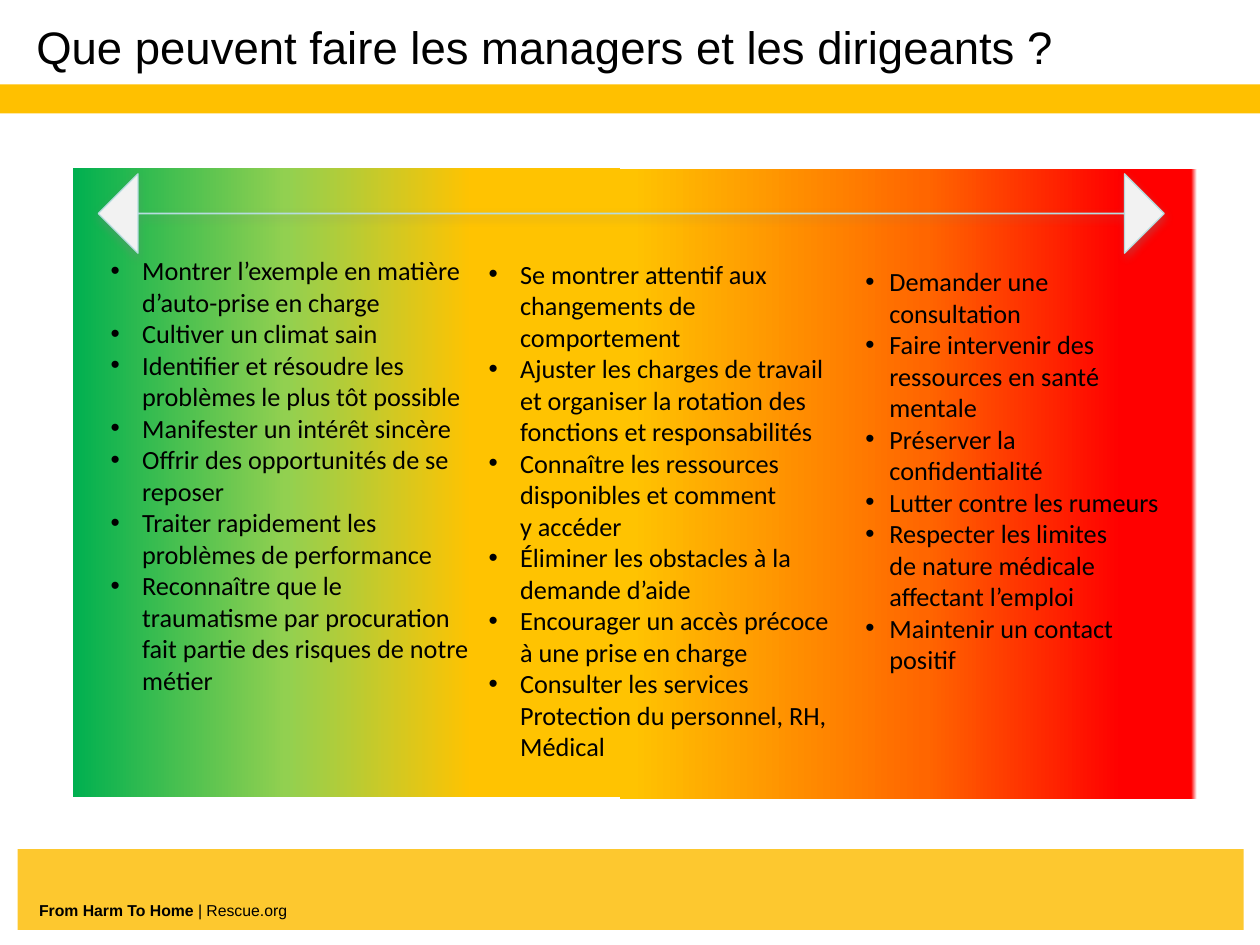
"""Build the slide on what managers and leaders can do."""
from dataclasses import dataclass

from lxml.etree import SubElement
from pptx import Presentation
from pptx.dml.color import RGBColor
from pptx.enum.shapes import MSO_SHAPE
from pptx.enum.text import MSO_ANCHOR
from pptx.oxml.ns import qn
from pptx.util import Inches, Pt


@dataclass(frozen=True)
class Theme:
    text: str = "000000"
    footer: str = "FDC82F"
    band: str = "FFC000"
    arrow: str = "F2F2F2"
    arrow_line: str = "B6DCDF"
    shadow: str = "808080"
    green_side: tuple = ((0, "00B050"), (39, "92D050"), (73, "FFC301"), (100, "FFC301"))
    red_side: tuple = ((0, "FFC301"), (2, "FFC301"), (53, "FF6600"), (87, "FF0000"),
                       (99, "FF0000"), (100, "FFFFFF"))
    head_font: str = "Arial"
    body_font: str = "Calibri"
    title_size: int = 26
    body_size: int = 15
    footer_size: int = 9


@dataclass(frozen=True)
class Box:
    left: float
    top: float
    width: float
    height: float

    def emu(self) -> tuple:
        return tuple(Inches(v) for v in (self.left, self.top, self.width, self.height))


@dataclass(frozen=True)
class Column:
    box: Box
    indent: float
    items: tuple


THEME = Theme()
COLUMNS = (
    Column(Box(0.78, 1.97, 3.08, 4.11), 0.25, (
        "Montrer l’exemple en matière d’auto-prise en charge",
        "Cultiver un climat sain",
        "Identifier et résoudre les problèmes le plus tôt possible",
        "Manifester un intérêt sincère",
        "Offrir des opportunités de se reposer",
        "Traiter rapidement les problèmes de performance",
        "Reconnaître que le traumatisme par procuration fait partie des risques de notre métier",
    )),
    Column(Box(3.78, 2, 3.16, 4.11), 0.25, (
        "Se montrer attentif aux changements de comportement",
        "Ajuster les charges de travail \net organiser la rotation des fonctions et responsabilités",
        "Connaître les ressources disponibles et comment \ny accéder",
        "Éliminer les obstacles à la demande d’aide",
        "Encourager un accès précoce \nà une prise en charge",
        "Consulter les services Protection du personnel, RH, Médical",
    )),
    Column(Box(6.77, 2.06, 2.62, 4.08), 0.19, (
        "Demander une consultation",
        "Faire intervenir des ressources en santé mentale",
        "Préserver la confidentialité",
        "Lutter contre les rumeurs",
        "Respecter les limites \nde nature médicale affectant l’emploi",
        "Maintenir un contact positif",
    )),
)


def add_block(s, box: Box, color: str, kind=MSO_SHAPE.RECTANGLE):
    sp = s.shapes.add_shape(kind, *box.emu())
    sp.shadow.inherit = False
    sp.fill.solid()
    sp.fill.fore_color.rgb = RGBColor.from_string(color)
    sp.line.fill.background()
    return sp


def add_gradient(s, box: Box, stops: tuple) -> None:
    sp = add_block(s, box, stops[0][1])
    sp.fill.gradient()
    sp.fill.gradient_angle = 0
    gs_lst = sp._element.spPr.find(qn("a:gradFill")).find(qn("a:gsLst"))
    for gs in list(gs_lst):
        gs_lst.remove(gs)
    for pos, color in stops:
        gs = SubElement(gs_lst, qn("a:gs"), pos=str(pos * 1000))
        SubElement(gs, qn("a:srgbClr"), val=color)


def add_arrow(s, box: Box) -> None:
    sp = add_block(s, box, THEME.arrow, MSO_SHAPE.LEFT_RIGHT_ARROW)
    sp.adjustments[0] = 0.008
    sp.adjustments[1] = 0.5
    sp.line.color.rgb = RGBColor.from_string(THEME.arrow_line)
    sp.line.width = Pt(0.75)
    effects = sp._element.spPr.find(qn("a:effectLst"))
    shadow = SubElement(effects, qn("a:outerShdw"), blurRad=str(Pt(5)), dist=str(Pt(1.8)),
                        dir="5400000", rotWithShape="0")
    color = SubElement(shadow, qn("a:srgbClr"), val=THEME.shadow)
    SubElement(color, qn("a:alpha"), val="35000")


def add_text(s, box: Box):
    tf = s.shapes.add_textbox(*box.emu()).text_frame
    tf.word_wrap = True
    return tf


def add_run(p, text: str, font: str, size: int, bold: bool = False) -> None:
    r = p.add_run()
    r.text = text
    r.font.name = font
    r.font.size = Pt(size)
    r.font.bold = bold
    r.font.color.rgb = RGBColor.from_string(THEME.text)


def add_column(s, col: Column) -> None:
    tf = add_text(s, col.box)
    for i, item in enumerate(col.items):
        p = tf.add_paragraph() if i else tf.paragraphs[0]
        pPr = p._p.get_or_add_pPr()
        pPr.set("marL", str(Inches(col.indent)))
        pPr.set("indent", str(-Inches(col.indent)))
        SubElement(pPr, qn("a:buFont"), typeface="Arial")
        SubElement(pPr, qn("a:buChar"), char="•")
        for j, line in enumerate(item.split("\n")):
            if j:
                p.add_line_break()
            add_run(p, line, THEME.body_font, THEME.body_size)


def add_title(s) -> None:
    p = add_text(s, Box(0.19, 0.15, 8.62, 0.67)).paragraphs[0]
    p.line_spacing = 0.9
    add_run(p, "Que peuvent faire les managers et les dirigeants ?",
            THEME.head_font, THEME.title_size)


def add_footer(s) -> None:
    add_block(s, Box(0.14, 6.74, 9.73, 0.64), THEME.footer)
    tf = add_text(s, Box(0.31, 7.15, 3.25, 0.15))
    tf.margin_left = tf.margin_top = tf.margin_right = tf.margin_bottom = 0
    tf.vertical_anchor = MSO_ANCHOR.BOTTOM
    p = tf.paragraphs[0]
    add_run(p, "From Harm To Home ", THEME.head_font, THEME.footer_size, bold=True)
    add_run(p, "| Rescue.org", THEME.head_font, THEME.footer_size)


def main() -> None:
    prs = Presentation()
    prs.slide_width, prs.slide_height = Inches(10), Inches(7.5)
    s = prs.slides.add_slide(prs.slide_layouts[6])
    add_footer(s)
    add_block(s, Box(0, 0.67, 10, 0.23), THEME.band)
    add_title(s)
    add_gradient(s, Box(0.58, 1.33, 4.34, 5), THEME.green_side)
    add_gradient(s, Box(4.92, 1.34, 4.58, 5), THEME.red_side)
    add_arrow(s, Box(0.78, 1.38, 8.46, 0.63))
    for col in COLUMNS:
        add_column(s, col)
    prs.save("out.pptx")


if __name__ == "__main__":
    main()
